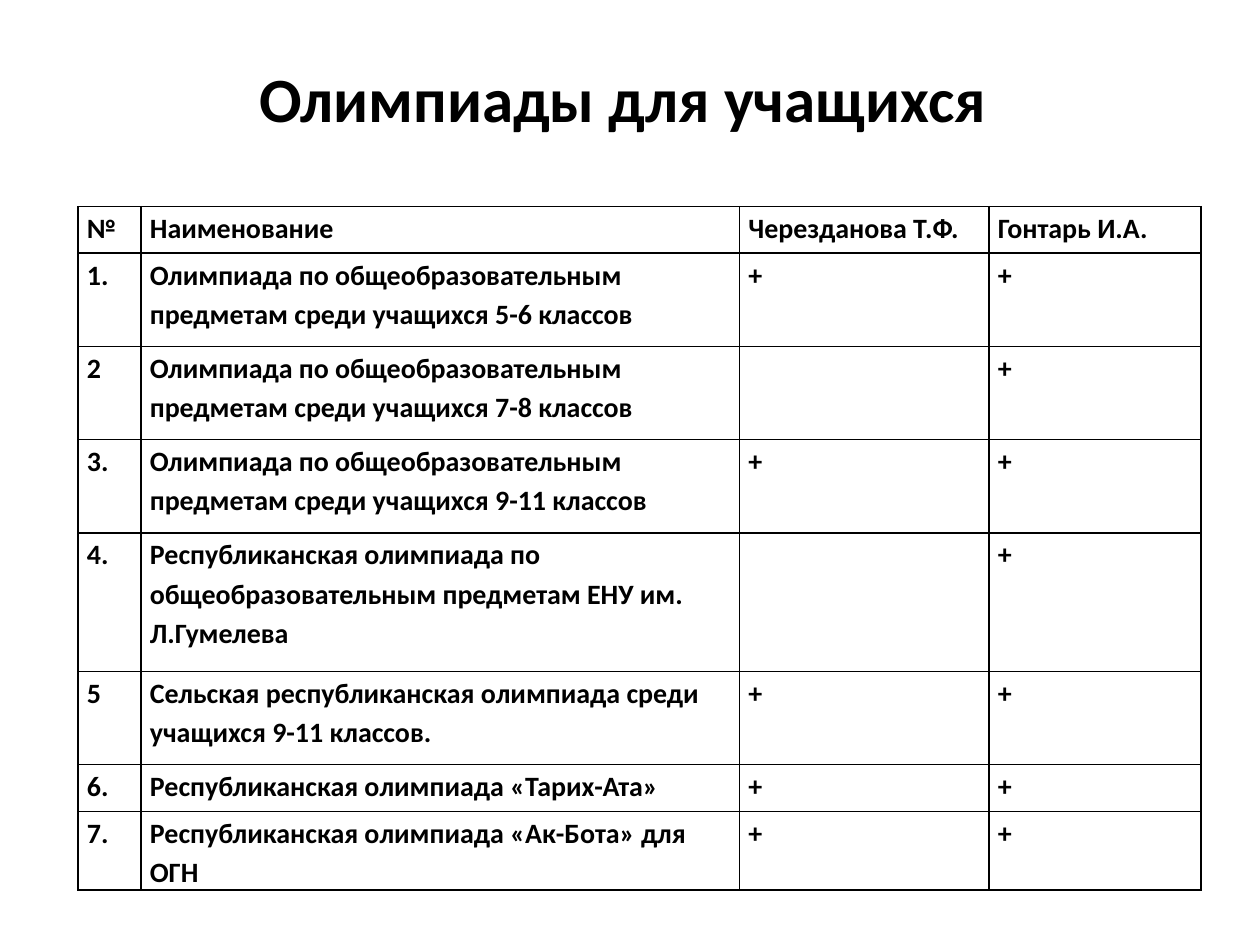
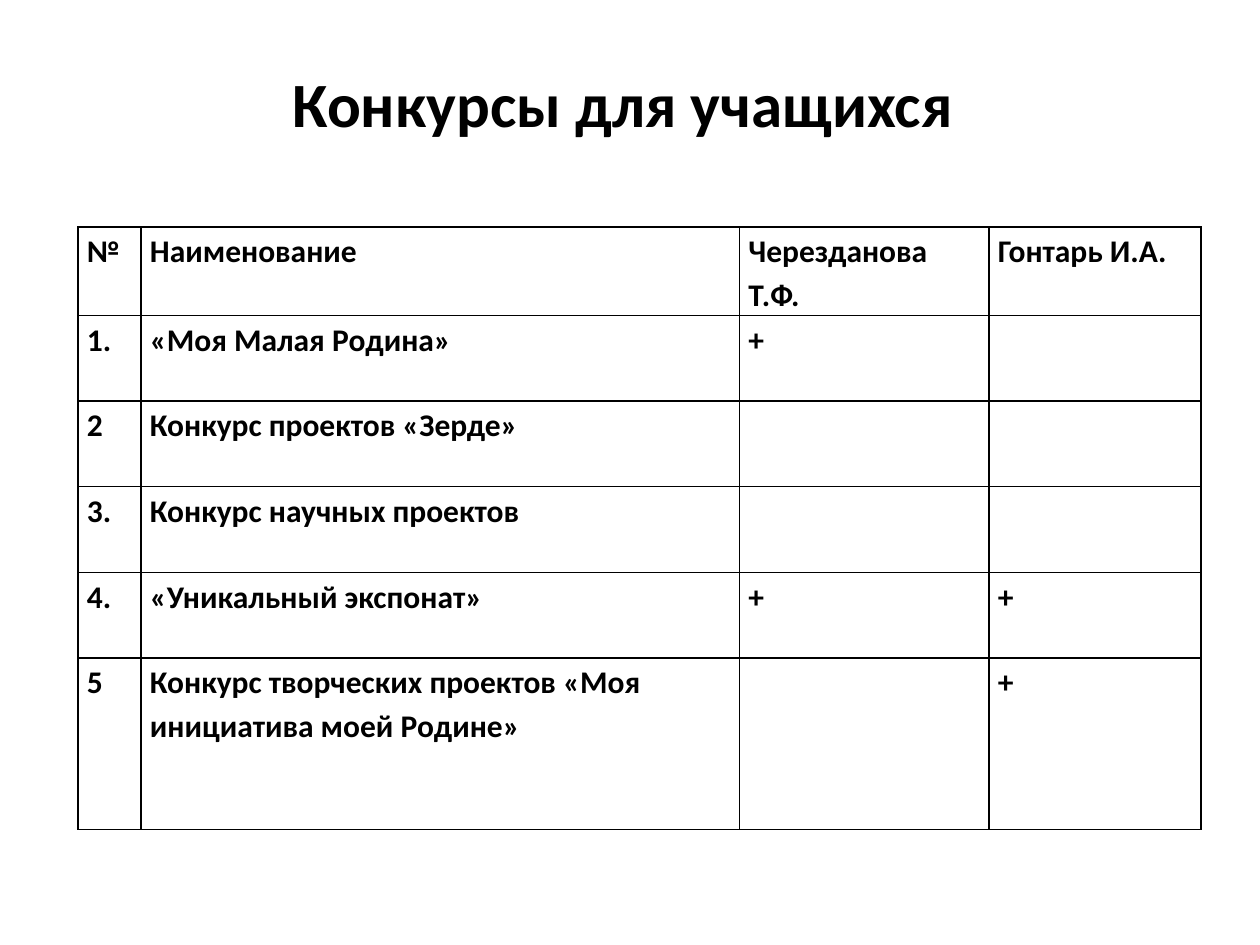
import pptx
import pptx.dml.color
import pptx.enum.text
import pptx.oxml.ns
import pptx.util
from lxml import etree
from pptx.util import Inches

COLORS = {"text": "000000", "border": "000000", "page": "FFFFFF"}
FONT = "Calibri"
TITLE_SIZE = 36
LINE_SPACING = 1.15
BORDER_POINTS = 1
COLUMN_WIDTHS = (0.5, 4.75, 1.98, 1.68)
TABLE_LEFT = 0.62
HEADER = ("№", "Наименование", "Черезданова Т.Ф.", "Гонтарь И.А.")

OLYMPIADS = [
    ("1.", "Олимпиада по общеобразовательным предметам среди учащихся 5-6 классов", "+", "+"),
    ("2", "Олимпиада по общеобразовательным предметам среди учащихся 7-8 классов", "", "+"),
    ("3.", "Олимпиада по общеобразовательным предметам среди учащихся 9-11 классов", "+", "+"),
    ("4.", "Республиканская олимпиада по общеобразовательным предметам ЕНУ им. Л.Гумелева", "", "+"),
    ("5", "Сельская республиканская олимпиада среди учащихся 9-11 классов.", "+", "+"),
    ("6.", "Республиканская олимпиада «Тарих-Ата»", "+", "+"),
    ("7.", "Республиканская олимпиада «Ак-Бота» для ОГН", "+", "+"),
]
CONTESTS = [
    ("1.", "«Моя Малая Родина»", "+", ""),
    ("2", "Конкурс проектов «Зерде»", "", ""),
    ("3.", "Конкурс научных проектов", "", ""),
    ("4.", "«Уникальный экспонат»", "+", "+"),
    ("5", "Конкурс творческих проектов «Моя инициатива моей Родине»", "", "+"),
]


def rgb(name):
    return pptx.dml.color.RGBColor.from_string(COLORS[name])


class SlideBuilder:
    """Holds the deck, its shared style and the slide being filled."""

    def __init__(self):
        self.deck = pptx.Presentation()
        self.deck.slide_width = Inches(10)
        self.deck.slide_height = Inches(7.5)
        self.page = None

    def new_page(self):
        self.page = self.deck.slides.add_slide(self.deck.slide_layouts[5])
        background = self.page.background.fill
        background.solid()
        background.fore_color.rgb = rgb("page")

    def format_runs(self, para, size):
        for span in para.runs:
            span.font.name = FONT
            span.font.size = pptx.util.Pt(size)
            span.font.bold = True
            span.font.color.rgb = rgb("text")

    def title(self, text, top, height):
        box = self.page.shapes.title
        box.left, box.top = Inches(0.5), Inches(top)
        box.width, box.height = Inches(9), Inches(height)
        frame = box.text_frame
        frame.text = text
        frame.word_wrap = True
        frame.auto_size = pptx.enum.text.MSO_AUTO_SIZE.NONE
        frame.vertical_anchor = pptx.enum.text.MSO_ANCHOR.MIDDLE
        para = frame.paragraphs[0]
        para.alignment = pptx.enum.text.PP_ALIGN.CENTER
        self.format_runs(para, TITLE_SIZE)

    def table(self, rows, top, row_heights, size):
        frame = self.page.shapes.add_table(
            len(rows), len(COLUMN_WIDTHS), Inches(TABLE_LEFT), Inches(top),
            Inches(sum(COLUMN_WIDTHS)), Inches(sum(row_heights)))
        table = frame.table
        table.first_row = table.horz_banding = False
        for column, width in zip(table.columns, COLUMN_WIDTHS):
            column.width = Inches(width)
        for row, height, texts in zip(table.rows, row_heights, rows):
            row.height = Inches(height)
            for cell, text in zip(row.cells, texts):
                self.fill_cell(cell, text, size)

    def fill_cell(self, cell, text, size):
        cell.margin_left = cell.margin_right = Inches(0.07)
        cell.margin_top = cell.margin_bottom = 0
        self.border(cell)
        cell.fill.background()
        cell.text = text
        para = cell.text_frame.paragraphs[0]
        para.line_spacing = LINE_SPACING
        self.format_runs(para, size)

    def border(self, cell):
        qn = pptx.oxml.ns.qn
        properties = cell._tc.get_or_add_tcPr()
        for side in ("lnL", "lnR", "lnT", "lnB"):
            line = etree.SubElement(properties, qn(f"a:{side}"),
                                    w=str(pptx.util.Pt(BORDER_POINTS)))
            fill = etree.SubElement(line, qn("a:solidFill"))
            etree.SubElement(fill, qn("a:srgbClr"), val=COLORS["border"])


def main():
    builder = SlideBuilder()

    builder.new_page()
    builder.title("Олимпиады для учащихся ", 0.34, 0.87)
    builder.table([HEADER] + OLYMPIADS, 1.64,
                  (0.37, 0.74, 0.74, 0.74, 1.1, 0.74, 0.37, 0.62), 16)

    builder.new_page()
    builder.title("Конкурсы для учащихся ", 0.3, 1.03)
    builder.table([HEADER] + CONTESTS, 1.8, (0.7,) + (0.68,) * 4 + (1.36,), 18)

    builder.deck.save("out.pptx")


if __name__ == "__main__":
    main()
